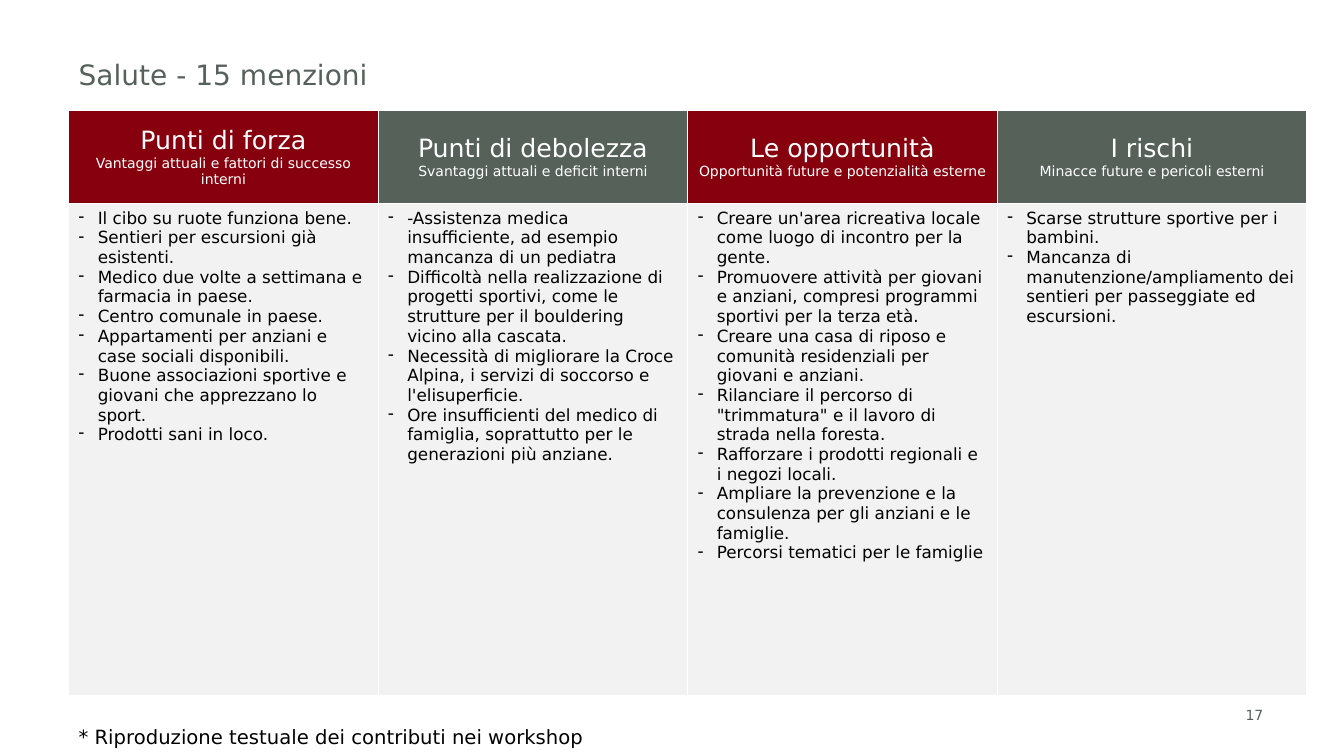
import pptx
import pptx.util
import pptx.dml.color
import pptx.enum.text
import pptx.oxml
import pptx.oxml.ns

Cm, Pt = pptx.util.Cm, pptx.util.Pt
ALIGN = pptx.enum.text.PP_ALIGN
ANCHOR = pptx.enum.text.MSO_ANCHOR

FONT = "DejaVu Sans"
HUES = {"red": "87000D", "green": "56615A", "pale": "F2F2F2",
        "white": "FFFFFF", "black": "000000"}

TITLE = "Salute - 15 menzioni"
NOTE = "* Riproduzione testuale dei contributi nei workshop"
PAGE = "17"
SWOT = [
    ("Punti di forza", "Vantaggi attuali e fattori di successo interni", [
        "Il cibo su ruote funziona bene.",
        "Sentieri per escursioni già esistenti.",
        "Medico due volte a settimana e farmacia in paese.",
        "Centro comunale in paese.",
        "Appartamenti per anziani e case sociali disponibili.",
        "Buone associazioni sportive e giovani che apprezzano lo sport.",
        "Prodotti sani in loco.",
    ]),
    ("Punti di debolezza", "Svantaggi attuali e deficit interni", [
        "-Assistenza medica insufficiente, ad esempio mancanza di un pediatra",
        "Difficoltà nella realizzazione di progetti sportivi, come le "
        "strutture per il bouldering vicino alla cascata.",
        "Necessità di migliorare la Croce Alpina, i servizi di soccorso e "
        "l'elisuperficie.",
        "Ore insufficienti del medico di famiglia, soprattutto per le "
        "generazioni più anziane.",
    ]),
    ("Le opportunità", "Opportunità future e potenzialità esterne", [
        "Creare un'area ricreativa locale come luogo di incontro per la gente.",
        "Promuovere attività per giovani e anziani, compresi programmi "
        "sportivi per la terza età.",
        "Creare una casa di riposo e comunità residenziali per giovani e "
        "anziani.",
        "Rilanciare il percorso di \"trimmatura\" e il lavoro di strada nella "
        "foresta.",
        "Rafforzare i prodotti regionali e i negozi locali.",
        "Ampliare la prevenzione e la consulenza per gli anziani e le "
        "famiglie.",
        "Percorsi tematici per le famiglie",
    ]),
    ("I rischi", "Minacce future e pericoli esterni", [
        "Scarse strutture sportive per i bambini.",
        "Mancanza di manutenzione/ampliamento dei sentieri per passeggiate "
        "ed escursioni.",
    ]),
]

LEFT = 1.73
COL = 7.8
ROWS = (2.36, 12.4)


def rgb(hue):
    return pptx.dml.color.RGBColor.from_string(HUES[hue])


def style(par, size, hue):
    for run in par.runs:
        run.font.name = FONT
        run.font.size = Pt(size)
        run.font.bold = False
        run.font.color.rgb = rgb(hue)


def place(box, left, top, width, height):
    box.left, box.top = Cm(left), Cm(top)
    box.width, box.height = Cm(width), Cm(height)


def write(box, text, size, hue, anchor):
    frame = box.text_frame
    frame.text = text
    frame.word_wrap = True
    frame.auto_size = pptx.enum.text.MSO_AUTO_SIZE.NONE
    frame.vertical_anchor = anchor
    frame.paragraphs[0].alignment = ALIGN.LEFT
    style(frame.paragraphs[0], size, hue)


def paint(cell, hue):
    """Give the cell white borders and a solid fill."""
    props = cell._tc.get_or_add_tcPr()
    for side in "LRTB":
        props.append(pptx.oxml.parse_xml(
            f'<a:ln{side} {pptx.oxml.ns.nsdecls("a")} w="{Pt(1)}"><a:solidFill>'
            f'<a:srgbClr val="{HUES["white"]}"/></a:solidFill></a:ln{side}>'))
    cell.fill.solid()
    cell.fill.fore_color.rgb = rgb(hue)


def dash(par):
    """Hang the paragraph on a dash bullet."""
    props = par._p.get_or_add_pPr()
    props.set("marL", str(Cm(0.48)))
    props.set("indent", str(-Cm(0.48)))
    props.append(pptx.oxml.parse_xml(
        f'<a:buChar {pptx.oxml.ns.nsdecls("a")} char="-"/>'))


def head(cell, name, hint, hue):
    paint(cell, hue)
    cell.vertical_anchor = ANCHOR.MIDDLE
    cell.text_frame.text = f"{name}\n{hint}"
    for par, size in zip(cell.text_frame.paragraphs, (18, 10)):
        par.alignment = ALIGN.CENTER
        style(par, size, "white")


def fill(cell, items):
    paint(cell, "pale")
    cell.text_frame.text = "\n".join(items)
    for par in cell.text_frame.paragraphs:
        dash(par)
        style(par, 12, "black")


def main():
    deck = pptx.Presentation()
    deck.slide_width, deck.slide_height = Cm(33.87), Cm(19.05)
    slide = deck.slides.add_slide(deck.slide_layouts[5])
    shapes = slide.shapes

    place(shapes.title, LEFT, 1.32, 28.2, 1)
    write(shapes.title, TITLE, 20, "green", ANCHOR.TOP)

    table = shapes.add_table(2, len(SWOT), Cm(LEFT), Cm(2.77),
                             Cm(COL * len(SWOT)), Cm(sum(ROWS))).table
    for row, height in zip(table.rows, ROWS):
        row.height = Cm(height)
    for col, (name, hint, items) in enumerate(SWOT):
        table.columns[col].width = Cm(COL)
        head(table.cell(0, col), name, hint, ("red", "green")[col % 2])
        fill(table.cell(1, col), items)

    for text, spot, size, hue, anchor in (
        (PAGE, (31.14, 17.53, 1.83, 0.97), 10, "green", ANCHOR.MIDDLE),
        (NOTE, (LEFT, 18.14, 18.2, 0.97), 14, "black", ANCHOR.TOP),
    ):
        box = shapes.add_textbox(*map(Cm, spot))
        write(box, text, size, hue, anchor)

    deck.save("out.pptx")


if __name__ == "__main__":
    main()
